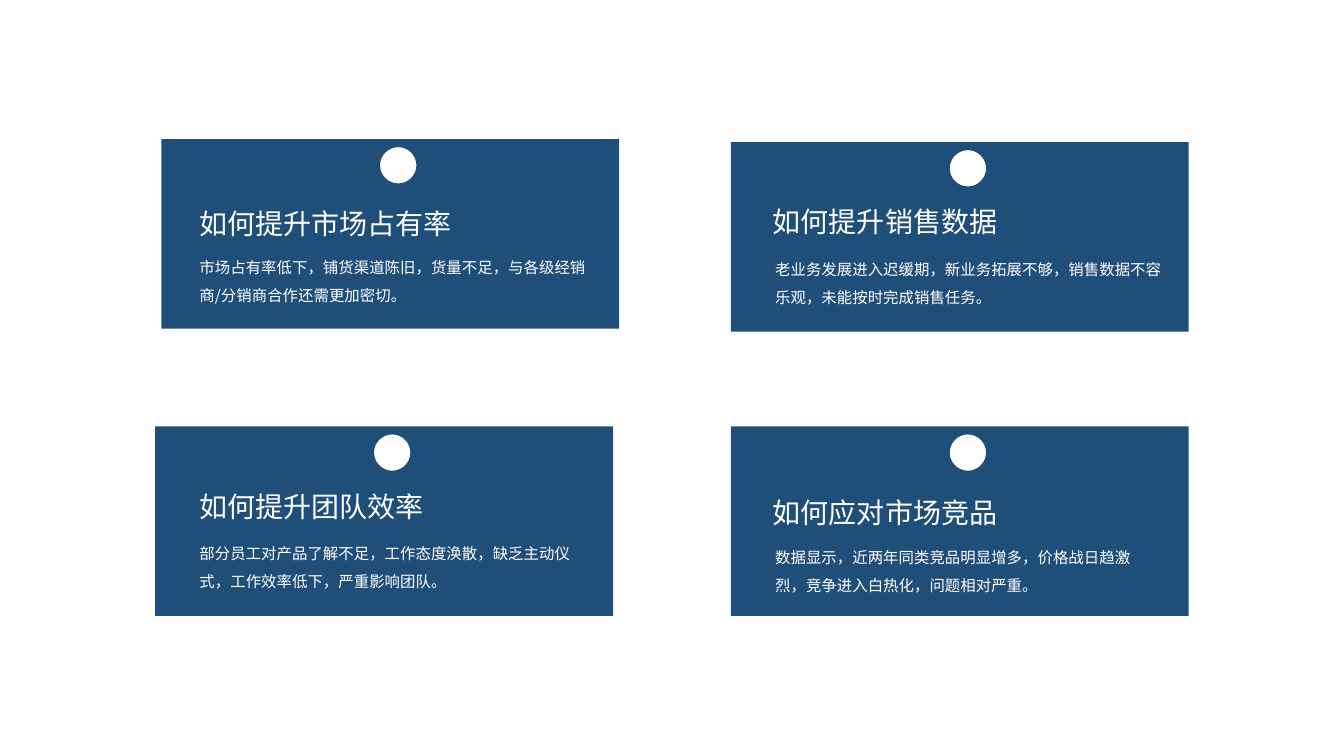
import pptx
import pptx.dml.color
import pptx.enum.text
import pptx.oxml.ns
import pptx.util
from lxml import etree
from pptx.util import Inches

FONT = "Noto Sans CJK SC"
NAVY = "1F4E79"
WHITE = "FFFFFF"
LEFT = pptx.enum.text.PP_ALIGN.LEFT
RIGHT = pptx.enum.text.PP_ALIGN.RIGHT
CARD_W, CARD_H = 4.54, 1.88
HOLE_X, HOLE_Y, HOLE_R = 2.35, 0.26, 0.18
BEND = 0.55
TITLE_W, TITLE_H, BODY_H = 2.74, 0.44, 0.62

# Card corner; title text, corner and alignment; body text, corner and width
CARDS = [
    ((1.6, 1.38), ("如何提升市场占有率", 1.84, 2, RIGHT),
     ("市场占有率低下，铺货渠道陈旧，货量不足，与各级经销商/分销商合作还需更加密切。", 1.88, 2.42, 4.05)),
    ((7.25, 1.41), ("如何提升销售数据", 7.25, 1.98, RIGHT),
     ("老业务发展进入迟缓期，新业务拓展不够，销售数据不容乐观，未能按时完成销售任务。", 7.59, 2.44, 4.14)),
    ((1.54, 4.23), ("如何提升团队效率", 1.88, 4.81, LEFT),
     ("部分员工对产品了解不足，工作态度涣散，缺乏主动仪式，工作效率低下，严重影响团队。", 1.88, 5.26, 3.89)),
    ((7.25, 4.23), ("如何应对市场竞品", 7.25, 4.87, RIGHT),
     ("数据显示，近两年同类竞品明显增多，价格战日趋激烈，竞争进入白热化，问题相对严重。", 7.59, 5.3, 3.86)),
]


def color(code):
    return pptx.dml.color.RGBColor.from_string(code)


def tag(name):
    return pptx.oxml.ns.qn("a:" + name)


def add_hole(card):
    """Complete the first contour as a circle of four curves, from its top."""
    track = card._element.find(".//" + tag("path"))
    x, y = 0, -1
    for place in range(1, 5):
        end_x, end_y = y, -x
        curve = etree.Element(tag("cubicBezTo"))
        for dx, dy in ((x + BEND * end_x, y + BEND * end_y),
                       (end_x + BEND * x, end_y + BEND * y),
                       (end_x, end_y)):
            etree.SubElement(curve, tag("pt"),
                             x=str(Inches(HOLE_X + HOLE_R * dx)),
                             y=str(Inches(HOLE_Y + HOLE_R * dy)))
        track.insert(place, curve)
        x, y = end_x, end_y
    track.insert(5, etree.Element(tag("close")))


def add_card(slide, left, top):
    """Draw a rectangle with a round hole punched near its top edge."""
    right, bottom = left + CARD_W, top + CARD_H
    corners = [(Inches(x), Inches(y)) for x, y in
               ((left, top), (right, top), (right, bottom), (left, bottom))]
    pen = slide.shapes.build_freeform(Inches(left + HOLE_X),
                                      Inches(top + HOLE_Y - HOLE_R))
    pen.move_to(*corners[0])
    pen.add_line_segments(corners[1:])
    card = pen.convert_to_shape()
    add_hole(card)
    card.shadow.inherit = False
    card.fill.solid()
    card.fill.fore_color.rgb = color(NAVY)
    card.line.fill.background()


def add_text(slide, text, box, size, align=LEFT, spacing=1.0):
    shape = slide.shapes.add_textbox(*map(Inches, box))
    frame = shape.text_frame
    frame.word_wrap = True
    frame.auto_size = pptx.enum.text.MSO_AUTO_SIZE.SHAPE_TO_FIT_TEXT
    frame.text = text
    para = frame.paragraphs[0]
    para.alignment = align
    para.line_spacing = spacing
    font = para.runs[0].font
    font.size = pptx.util.Pt(size)
    font.name = FONT
    font.color.rgb = color(WHITE)
    props = para.runs[0]._r.get_or_add_rPr()
    etree.SubElement(props, tag("ea"), typeface=FONT)


def main():
    deck = pptx.Presentation()
    deck.slide_width = Inches(13.33)
    deck.slide_height = Inches(7.5)
    slide = deck.slides.add_slide(deck.slide_layouts[6])
    for corner, _, _ in CARDS:
        add_card(slide, *corner)
    for _, (title, x, y, align), (body, left, top, width) in CARDS:
        add_text(slide, title, (x, y, TITLE_W, TITLE_H), 20, align)
        add_text(slide, body, (left, top, width, BODY_H), 11, spacing=1.5)
    deck.save("out.pptx")


if __name__ == "__main__":
    main()
